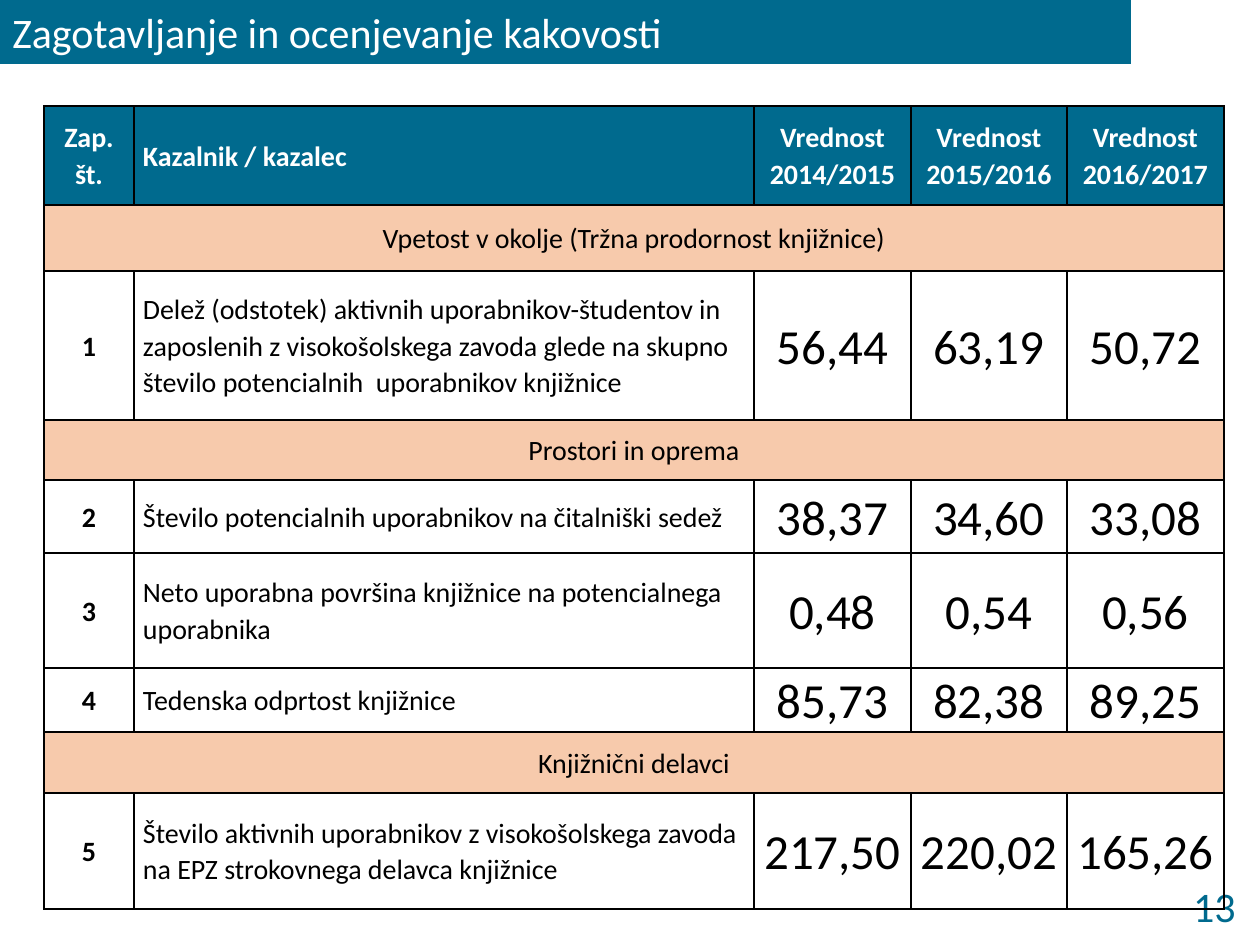
"""Build the slide with library quality indicators as a table."""
from dataclasses import dataclass
from typing import Any, Optional

import lxml.etree
import pptx
import pptx.dml.color
import pptx.enum.shapes
import pptx.enum.text
import pptx.oxml.ns
import pptx.util

PX = pptx.util.Inches(1) / 126
TEAL = pptx.dml.color.RGBColor(0x00, 0x6A, 0x8E)
PEACH = pptx.dml.color.RGBColor(0xF7, 0xCA, 0xAC)
WHITE = pptx.dml.color.RGBColor(0xFF, 0xFF, 0xFF)
BLACK = pptx.dml.color.RGBColor(0x00, 0x00, 0x00)
LEFT = pptx.enum.text.PP_ALIGN.LEFT
CENTER = pptx.enum.text.PP_ALIGN.CENTER
RIGHT = pptx.enum.text.PP_ALIGN.RIGHT
MIDDLE = pptx.enum.text.MSO_ANCHOR.MIDDLE

COLUMN_WIDTHS = (90, 620, 157, 156, 157)
COLUMN_ALIGNMENTS = (CENTER, LEFT, CENTER, CENTER, CENTER)
HEADINGS = ("Zap. št.", "Kazalnik / kazalec", "Vrednost 2014/2015",
            "Vrednost 2015/2016", "Vrednost 2016/2017")


@dataclass(frozen=True)
class Section:
    height: int
    title: str


@dataclass(frozen=True)
class Indicator:
    height: int
    number: str
    name: str
    values: tuple[str, str, str]


HEADING_HEIGHT = 99
ENTRIES = (
    Section(66, "Vpetost v okolje (Tržna prodornost knjižnice)"),
    Indicator(149, "1", "Delež (odstotek) aktivnih uporabnikov-študentov in "
              "zaposlenih z visokošolskega zavoda glede na skupno število "
              "potencialnih  uporabnikov knjižnice", ("56,44", "63,19", "50,72")),
    Section(60, "Prostori in oprema"),
    Indicator(73, "2", "Število potencialnih uporabnikov na čitalniški sedež",
              ("38,37", "34,60", "33,08")),
    Indicator(115, "3", "Neto uporabna površina knjižnice na potencialnega uporabnika",
              ("0,48", "0,54", "0,56")),
    Indicator(64, "4", "Tedenska odprtost knjižnice", ("85,73", "82,38", "89,25")),
    Section(61, "Knjižnični delavci"),
    Indicator(116, "5", "Število aktivnih uporabnikov z visokošolskega zavoda "
              "na EPZ strokovnega delavca knjižnice", ("217,50", "220,02", "165,26")),
)


def px(length: int) -> int:
    """Turn pixels into EMU."""
    return round(length * PX)


def write(frame: Any, text: str, size: int, color: pptx.dml.color.RGBColor,
          alignment: Any, bold: bool = False, spacing: Optional[float] = None) -> None:
    """Write one formatted paragraph into a text frame."""
    paragraph = frame.paragraphs[0]
    run = paragraph.add_run()
    run.text = text
    font_format = {"name": "Calibri", "size": pptx.util.Pt(size), "bold": bold}
    paragraph_format = {"alignment": alignment, "line_spacing": spacing}
    for target, values in ((run.font, font_format), (paragraph, paragraph_format)):
        for attribute, value in values.items():
            setattr(target, attribute, value)
    run.font.color.rgb = color


def add_borders(cell: Any) -> None:
    """Draw a one-point black line on every side of a cell."""
    properties = cell._tc.get_or_add_tcPr()
    qn = pptx.oxml.ns.qn
    for side in ("a:lnL", "a:lnR", "a:lnT", "a:lnB"):
        line = lxml.etree.SubElement(properties, qn(side), w=str(pptx.util.Pt(1)))
        solid = lxml.etree.SubElement(line, qn("a:solidFill"))
        lxml.etree.SubElement(solid, qn("a:srgbClr"), val=str(BLACK))


def format_cell(cell: Any, fill: Optional[pptx.dml.color.RGBColor]) -> None:
    """Set the insets, anchor, borders and fill of a cell."""
    cell_format = {"margin_left": px(9), "margin_right": px(9), "margin_top": 0,
                   "margin_bottom": 0, "vertical_anchor": MIDDLE}
    for attribute, value in cell_format.items():
        setattr(cell, attribute, value)
    add_borders(cell)
    if fill is None:
        cell.fill.background()
    else:
        cell.fill.solid()
        cell.fill.fore_color.rgb = fill


def fill_section(cells: list[Any], section: Section) -> None:
    """Fill a row with one section title across all columns."""
    for cell in cells:
        format_cell(cell, PEACH)
    cells[0].merge(cells[-1])
    write(cells[0].text_frame, section.title, 16, BLACK, CENTER, spacing=1.07)


def fill_indicator(cells: list[Any], indicator: Indicator) -> None:
    """Fill a row with the number, name and values of an indicator."""
    texts = (indicator.number, indicator.name, *indicator.values)
    for column, (cell, text) in enumerate(zip(cells, texts)):
        format_cell(cell, None)
        write(cell.text_frame, text, 28 if column > 1 else 16, BLACK,
              COLUMN_ALIGNMENTS[column], bold=column == 0, spacing=1.07)


def add_indicator_table(slide: Any) -> None:
    """Add the table of indicators."""
    heights = (HEADING_HEIGHT, *(entry.height for entry in ENTRIES))
    frame = slide.shapes.add_table(len(heights), len(COLUMN_WIDTHS), px(44), px(106),
                                   px(sum(COLUMN_WIDTHS)), px(sum(heights)))
    table = frame.table
    for column, width in zip(table.columns, COLUMN_WIDTHS):
        column.width = px(width)
    for row, height in zip(table.rows, heights):
        row.height = px(height)
    heading_row, *entry_rows = [list(row.cells) for row in table.rows]
    for cell, heading, alignment in zip(heading_row, HEADINGS, COLUMN_ALIGNMENTS):
        format_cell(cell, TEAL)
        write(cell.text_frame, heading, 16, WHITE, alignment, bold=True, spacing=1.07)
    for cells, entry in zip(entry_rows, ENTRIES):
        if isinstance(entry, Section):
            fill_section(cells, entry)
        else:
            fill_indicator(cells, entry)


def add_page_number(slide: Any) -> None:
    """Add the page number in the lower right corner."""
    page_number = slide.shapes.add_textbox(px(1125), px(879), px(123), px(54))
    page_number.text_frame.word_wrap = True
    page_number.text_frame.vertical_anchor = MIDDLE
    write(page_number.text_frame, "13", 24, TEAL, RIGHT)


def add_title_band(slide: Any) -> None:
    """Add the coloured band with the slide title."""
    band = slide.shapes.add_shape(pptx.enum.shapes.MSO_SHAPE.RECTANGLE,
                                  0, 0, px(1131), px(64))
    band.shadow.inherit = False
    band.fill.solid()
    band.fill.fore_color.rgb = TEAL
    band.line.fill.background()
    band.text_frame.word_wrap = True
    band.text_frame.vertical_anchor = MIDDLE
    write(band.text_frame, "Zagotavljanje in ocenjevanje kakovosti", 24, WHITE, LEFT)


def main() -> None:
    """Build and save the presentation."""
    presentation = pptx.Presentation()
    presentation.slide_width = px(1260)
    presentation.slide_height = px(945)
    slide = presentation.slides.add_slide(presentation.slide_layouts[6])
    add_page_number(slide)
    add_title_band(slide)
    add_indicator_table(slide)
    presentation.save("out.pptx")


if __name__ == "__main__":
    main()
